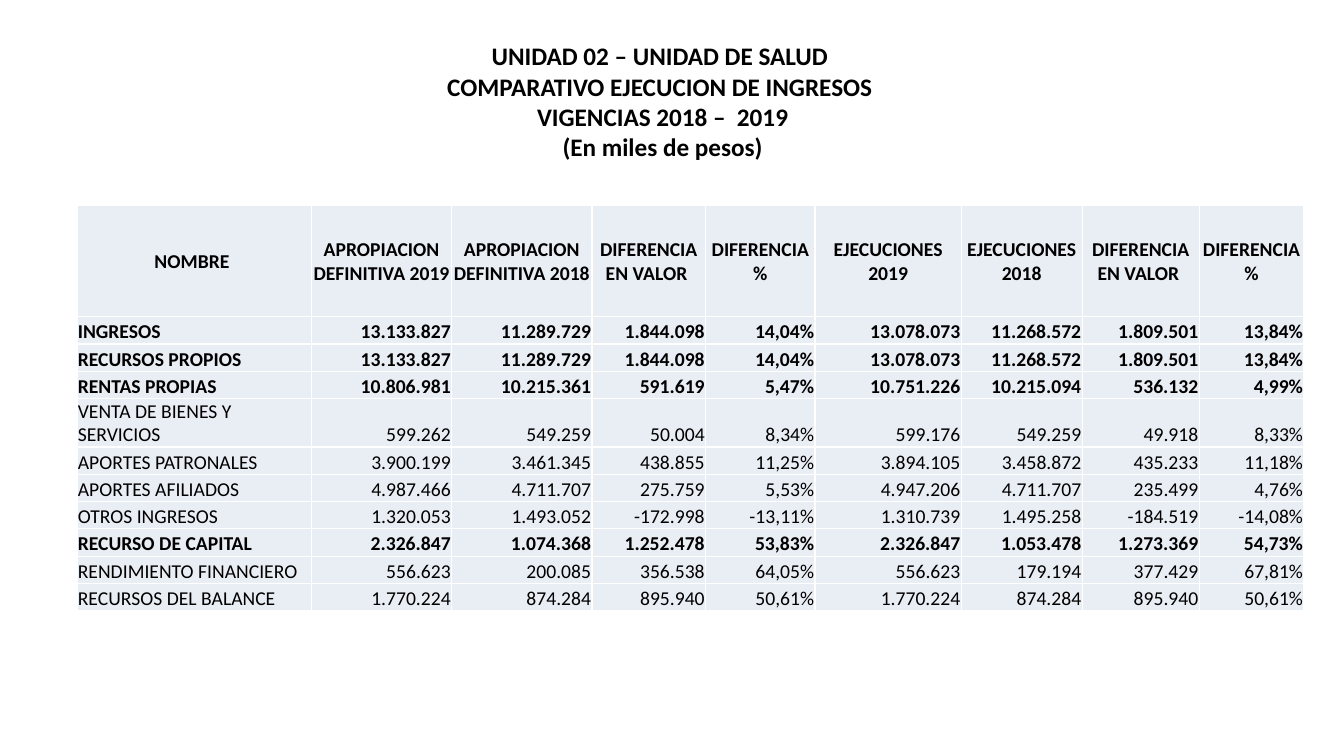
from lxml.etree import SubElement
from pptx import Presentation
from pptx.dml.color import RGBColor
from pptx.enum.text import MSO_ANCHOR, MSO_AUTO_SIZE, PP_ALIGN
from pptx.oxml.ns import qn
from pptx.util import Pt

TITLE = ["UNIDAD 02 – UNIDAD DE SALUD ", "COMPARATIVO EJECUCION DE INGRESOS ",
         "VIGENCIAS 2018 –  2019", "(En miles de pesos)"]
HEADS = ["NOMBRE ", "APROPIACION DEFINITIVA 2019", "APROPIACION DEFINITIVA 2018",
         "DIFERENCIA EN VALOR ", "DIFERENCIA %", "EJECUCIONES 2019",
         "EJECUCIONES 2018", "DIFERENCIA EN VALOR ", "DIFERENCIA %"]
ROWS = [
    ("INGRESOS", "13.133.827 11.289.729 1.844.098 14,04% 13.078.073 11.268.572 1.809.501 13,84%"),
    ("RECURSOS PROPIOS", "13.133.827 11.289.729 1.844.098 14,04% 13.078.073 11.268.572 1.809.501 13,84%"),
    ("RENTAS PROPIAS", "10.806.981 10.215.361 591.619 5,47% 10.751.226 10.215.094 536.132 4,99%"),
    ("VENTA DE BIENES Y SERVICIOS", "599.262 549.259 50.004 8,34% 599.176 549.259 49.918 8,33%"),
    ("APORTES PATRONALES", "3.900.199 3.461.345 438.855 11,25% 3.894.105 3.458.872 435.233 11,18%"),
    ("APORTES AFILIADOS", "4.987.466 4.711.707 275.759 5,53% 4.947.206 4.711.707 235.499 4,76%"),
    ("OTROS INGRESOS", "1.320.053 1.493.052 -172.998 -13,11% 1.310.739 1.495.258 -184.519 -14,08%"),
    ("RECURSO DE CAPITAL", "2.326.847 1.074.368 1.252.478 53,83% 2.326.847 1.053.478 1.273.369 54,73%"),
    ("RENDIMIENTO FINANCIERO", "556.623 200.085 356.538 64,05% 556.623 179.194 377.429 67,81%"),
    ("RECURSOS DEL BALANCE", "1.770.224 874.284 895.940 50,61% 1.770.224 874.284 895.940 50,61%"),
]
TOTALS = {"INGRESOS", "RECURSOS PROPIOS", "RENTAS PROPIAS", "RECURSO DE CAPITAL"}
WIDTHS = [167.5, 100.2, 100.2, 81.2, 78.2, 104.4, 86.4, 83.6, 74.8]
HEAD_H, ROW_H = 79.2, 19.5


def color(code):
    """Turn a hex string into a colour."""
    return RGBColor.from_string(code)


class Deck:
    """Hold the style and the current slide."""

    font, ink, tint, rule = "Calibri", "000000", "E9EDF4", "FFFFFF"

    def __init__(self):
        """Open a wide deck with one title slide."""
        self.file = Presentation()
        self.file.slide_width, self.file.slide_height = Pt(960), Pt(540)
        self.slide = self.file.slides.add_slide(self.file.slide_layouts[5])

    def run(self, para, text, size, bold):
        """Add one styled run."""
        run = para.add_run()
        run.text = text
        run.font.name, run.font.size, run.font.bold = self.font, Pt(size), bold
        run.font.color.rgb = color(self.ink)

    def title(self, lines, left, top, width, height):
        """Fill and place the title."""
        box = self.slide.shapes.title
        box.left, box.top, box.width, box.height = map(Pt, (left, top, width, height))
        frame = box.text_frame
        frame.word_wrap, frame.auto_size = True, MSO_AUTO_SIZE.NONE
        frame.vertical_anchor = MSO_ANCHOR.MIDDLE
        para = frame.paragraphs[0]
        para.alignment = PP_ALIGN.CENTER
        for i, line in enumerate(lines):
            if i:
                para.add_line_break()
            self.run(para, line, 18, True)

    def edges(self, cell):
        """Draw the four borders of a cell."""
        props = cell._tc.get_or_add_tcPr()
        for side in "LRTB":
            line = SubElement(props, qn(f"a:ln{side}"), w=str(Pt(1)))
            fill = SubElement(line, qn("a:solidFill"))
            SubElement(fill, qn("a:srgbClr"), val=self.rule)

    def cell(self, cell, text, align, anchor, bold):
        """Fill one table cell."""
        self.edges(cell)
        cell.fill.solid()
        cell.fill.fore_color.rgb = color(self.tint)
        cell.margin_left = cell.margin_right = cell.margin_top = Pt(0.6)
        cell.margin_bottom = Pt(0)
        cell.vertical_anchor = anchor
        para = cell.text_frame.paragraphs[0]
        para.alignment = align
        self.run(para, text, 14, bold)

    def table(self, heads, rows, left, top):
        """Build the table from its heads and rows."""
        high = HEAD_H + ROW_H * len(rows)
        frame = self.slide.shapes.add_table(
            len(rows) + 1, len(heads), Pt(left), Pt(top), Pt(sum(WIDTHS)), Pt(high))
        table = frame.table
        table.first_row = table.horz_banding = False
        for col, width in zip(table.columns, WIDTHS):
            col.width = Pt(width)
        for i, row in enumerate(table.rows):
            row.height = Pt(ROW_H if i else HEAD_H)
        for j, head in enumerate(heads):
            self.cell(table.cell(0, j), head, PP_ALIGN.CENTER, MSO_ANCHOR.MIDDLE, True)
        for i, (name, values) in enumerate(rows, 1):
            for j, text in enumerate([name, *values.split()]):
                align = PP_ALIGN.RIGHT if j else PP_ALIGN.LEFT
                self.cell(table.cell(i, j), text, align, MSO_ANCHOR.BOTTOM, name in TOTALS)


def main():
    """Build and save the slide."""
    deck = Deck()
    deck.title(TITLE, 131, 26.6, 684.7, 91.4)
    deck.table(HEADS, ROWS, 55, 147)
    deck.file.save("out.pptx")


if __name__ == "__main__":
    main()
